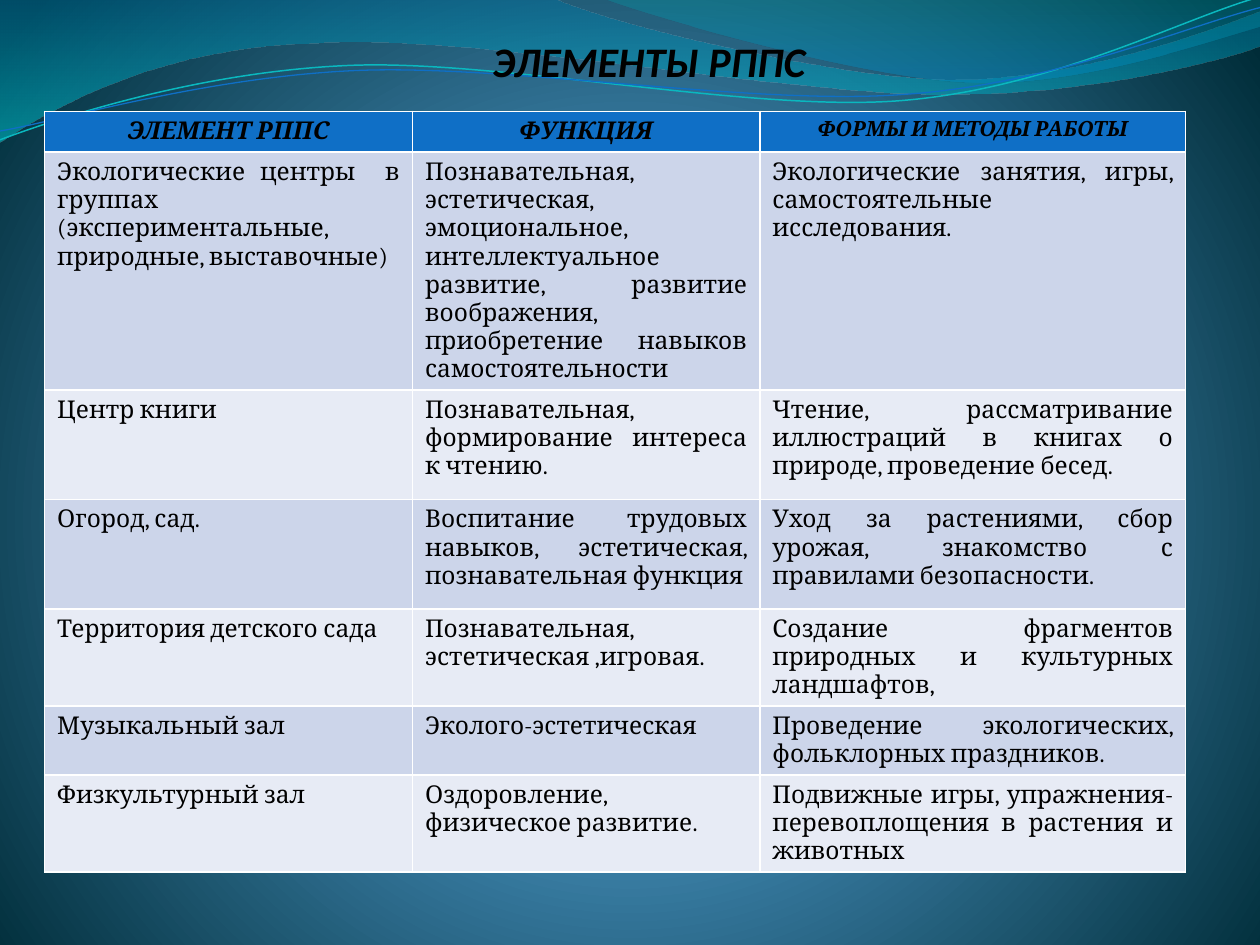
"""Build a slide with a table of environment elements on a wave background."""
from math import cos, radians, sin
from lxml import etree
from pptx import Presentation
from pptx.dml.color import RGBColor as Rgb
from pptx.enum.text import MSO_ANCHOR as Anchor, MSO_AUTO_SIZE as AutoSize, PP_ALIGN as Align
from pptx.oxml.ns import qn
from pptx.util import Pt

COLORS = {
    "black": "000000", "header": "0F6FC6",
    "band_dark": "CCD5EA", "band_light": "E7EBF5",
    "sky": "4AA0D6", "sky_mid": "4C98C7", "night": "002C38",
    "wave_blue": "0074A1", "wave_cyan": "00C6CF",
    "wave_teal": "00A1A9", "wave_azure": "008BBF", "line_teal": "0AB8BF",
}


def set_gradient(gradient, stops, shade, **shade_values):
    """Replace the contents of a gradient; a stop is position, colour, opacity."""
    for child in list(gradient):
        gradient.remove(child)
    stop_list = etree.SubElement(gradient, qn("a:gsLst"))
    for position, color, opacity in stops:
        stop = etree.SubElement(stop_list, qn("a:gs"), pos=str(position * 1000))
        tint = etree.SubElement(stop, qn("a:srgbClr"), val=COLORS[color])
        if opacity < 100:
            etree.SubElement(tint, qn("a:alpha"), val=str(opacity * 1000))
    return etree.SubElement(gradient, qn(shade), **shade_values)


def write(frame, text, align, **font_values):
    """Write one formatted paragraph into a text frame."""
    para = frame.paragraphs[0]
    para.alignment = align
    span = para.add_run()
    span.text = text
    for name, value in font_values.items():
        setattr(span.font, name, value)
    span.font.color.rgb = Rgb.from_string(COLORS["black"])


deck = Presentation()
deck.slide_width, deck.slide_height = Pt(720), Pt(540)
page = deck.slides.add_slide(deck.slide_layouts[5])

page.background.fill.gradient()
backdrop = page.element.find(".//" + qn("a:gradFill"))
circle = set_gradient(
    backdrop, [(0, "sky", 100), (25, "sky_mid", 100), (100, "night", 100)], "a:path", path="circle")
etree.SubElement(circle, qn("a:fillToRect"), l="10000", t="110000", r="10000", b="100000")

WAVES = [
    {"box": (-0.7, -0.7, 721.4, 82.1), "turn": 0,
     "stops": [(0, "wave_blue", 45), (100, "wave_cyan", 55)],
     "segments": [(0, 0), (316.8, -0.7), (342.7, 12.2, 478, 45.4, 545.8, 45.4),
                  (614, 45.4, 689.8, 18.7, 720, 6.5), (720.7, 25.9),
                  (707.8, 31.7, 626.4, 54.7, 537.1, 54), (447.8, 54, 275, 20.2, 185, 24.5),
                  (92.9, 25.9, 33.1, 59.8, -0.7, 81.4), (0, 0)]},
    {"box": (344.9, -0.7, 375.1, 50.4), "turn": 0,
     "stops": [(0, "wave_teal", 30), (80, "wave_azure", 45)],
     "segments": [(344.9, -0.7), (366.5, 7.9, 491, 44.6, 553.7, 46.8),
                  (616.3, 49.7, 691.9, 23, 720, 15.1), (720, 0), (344.9, -0.7)]},
    {"box": (-1.4, 15.8, 721.4, 51.1), "turn": -2.7, "line": ("line_teal", 0.85),
     "segments": [(0, 79.9), (34.6, 67, 113.8, 41, 199.4, 37.4),
                  (284.4, 33.8, 427, 64.1, 513.4, 57.6),
                  (599.8, 51.1, 675.4, 10.8, 718.6, -1.4)]},
    {"box": (-1.4, 21.6, 722.2, 41.8), "turn": -2.7, "line": ("header", 0.75),
     "segments": [(0, 74.9), (33.8, 69.1, 118.1, 43.9, 203.8, 40.3),
                  (290.2, 36.7, 430.6, 60.5, 516.2, 54),
                  (601.9, 48.2, 677.5, 15.1, 720, 4.3)]},
]
for wave in WAVES:
    left, top, width, height = wave["box"]
    segments = wave["segments"]
    closed = "stops" in wave
    ends = [(Pt(segment[-2]), Pt(segment[-1])) for segment in segments]
    builder = page.shapes.build_freeform(*ends[0])
    builder.add_line_segments(ends[1:], close=closed)
    shape = builder.convert_to_shape()
    shape.left, shape.top, shape.width, shape.height = map(Pt, wave["box"])
    shape.rotation = wave["turn"]
    shape.shadow.inherit = False

    outline = shape.element.find(".//" + qn("a:path"))
    for child in list(outline):
        outline.remove(child)
    outline.set("w", str(Pt(width)))
    outline.set("h", str(Pt(height)))
    angle = radians(-wave["turn"])
    for index, segment in enumerate(segments):
        tag = "a:moveTo" if index == 0 else "a:lnTo" if len(segment) == 2 else "a:cubicBezTo"
        command = etree.SubElement(outline, qn(tag))
        for x, y in zip(segment[::2], segment[1::2]):
            dx, dy = x - left - width / 2, y - top - height / 2
            local_x = width / 2 + dx * cos(angle) - dy * sin(angle)
            local_y = height / 2 + dx * sin(angle) + dy * cos(angle)
            etree.SubElement(command, qn("a:pt"), x=str(Pt(local_x)), y=str(Pt(local_y)))

    if closed:
        etree.SubElement(outline, qn("a:close"))
        shape.fill.gradient()
        set_gradient(shape.element.spPr.find(qn("a:gradFill")), wave["stops"],
                     "a:lin", ang="5400000", scaled="0")
        shape.line.fill.background()
    else:
        color, weight = wave["line"]
        shape.fill.background()
        shape.line.color.rgb = Rgb.from_string(COLORS[color])
        shape.line.width = Pt(weight)

title = page.shapes.title
page.shapes.element.append(title.element)
title.left, title.top, title.width, title.height = Pt(41.8), Pt(15.1), Pt(658), Pt(33.8)
frame = title.text_frame
FRAME_FORMAT = {"margin_left": 0, "margin_top": 0, "margin_right": 0, "margin_bottom": 0,
                "vertical_anchor": Anchor.BOTTOM, "word_wrap": True, "auto_size": AutoSize.NONE}
for name, value in FRAME_FORMAT.items():
    setattr(frame, name, value)
write(frame, "ЭЛЕМЕНТЫ РППС", Align.CENTER, name="Calibri", size=Pt(24), bold=True, italic=True)

ROWS = [
    ("ЭЛЕМЕНТ РППС", "ФУНКЦИЯ", "ФОРМЫ И МЕТОДЫ РАБОТЫ"),
    ("Экологические центры  в группах (экспериментальные, природные, выставочные)",
     "Познавательная, эстетическая, эмоциональное, интеллектуальное развитие, "
     "развитие воображения, приобретение навыков самостоятельности",
     "Экологические занятия, игры, самостоятельные исследования."),
    ("Центр книги", "Познавательная, формирование интереса к чтению.",
     "Чтение, рассматривание иллюстраций в книгах о природе, проведение бесед."),
    ("Огород, сад.", "Воспитание трудовых навыков, эстетическая, познавательная функция",
     "Уход за растениями, сбор урожая, знакомство с правилами безопасности."),
    ("Территория детского сада", "Познавательная, эстетическая ,игровая.",
     "Создание фрагментов природных и культурных ландшафтов, "),
    ("Музыкальный зал", "Эколого-эстетическая",
     "Проведение экологических, фольклорных праздников."),
    ("Физкультурный зал", "Оздоровление, физическое развитие.",
     "Подвижные игры, упражнения-перевоплощения в растения и животных"),
]
COLUMN_WIDTHS = [210.2, 198.5, 243.4]
ROW_HEIGHTS = [22, 136, 62.5, 62.5, 55, 39, 55]
table = page.shapes.add_table(len(ROWS), len(COLUMN_WIDTHS), Pt(25.5), Pt(63.6),
                              Pt(sum(COLUMN_WIDTHS)), Pt(sum(ROW_HEIGHTS))).table
for column, width in zip(table.columns, COLUMN_WIDTHS):
    column.width = Pt(width)
for row_index, (texts, height) in enumerate(zip(ROWS, ROW_HEIGHTS)):
    table.rows[row_index].height = Pt(height)
    is_header = row_index == 0
    band = "header" if is_header else "band_dark" if row_index % 2 else "band_light"
    for column_index, text in enumerate(texts):
        cell = table.cell(row_index, column_index)
        size = 12 if is_header and column_index == 2 else 14
        write(cell.text_frame, text, Align.CENTER if is_header else Align.JUSTIFY,
              name="Cambria", size=Pt(size), bold=is_header, italic=is_header)
        cell.fill.solid()
        cell.fill.fore_color.rgb = Rgb.from_string(COLORS[band])

deck.save("out.pptx")
